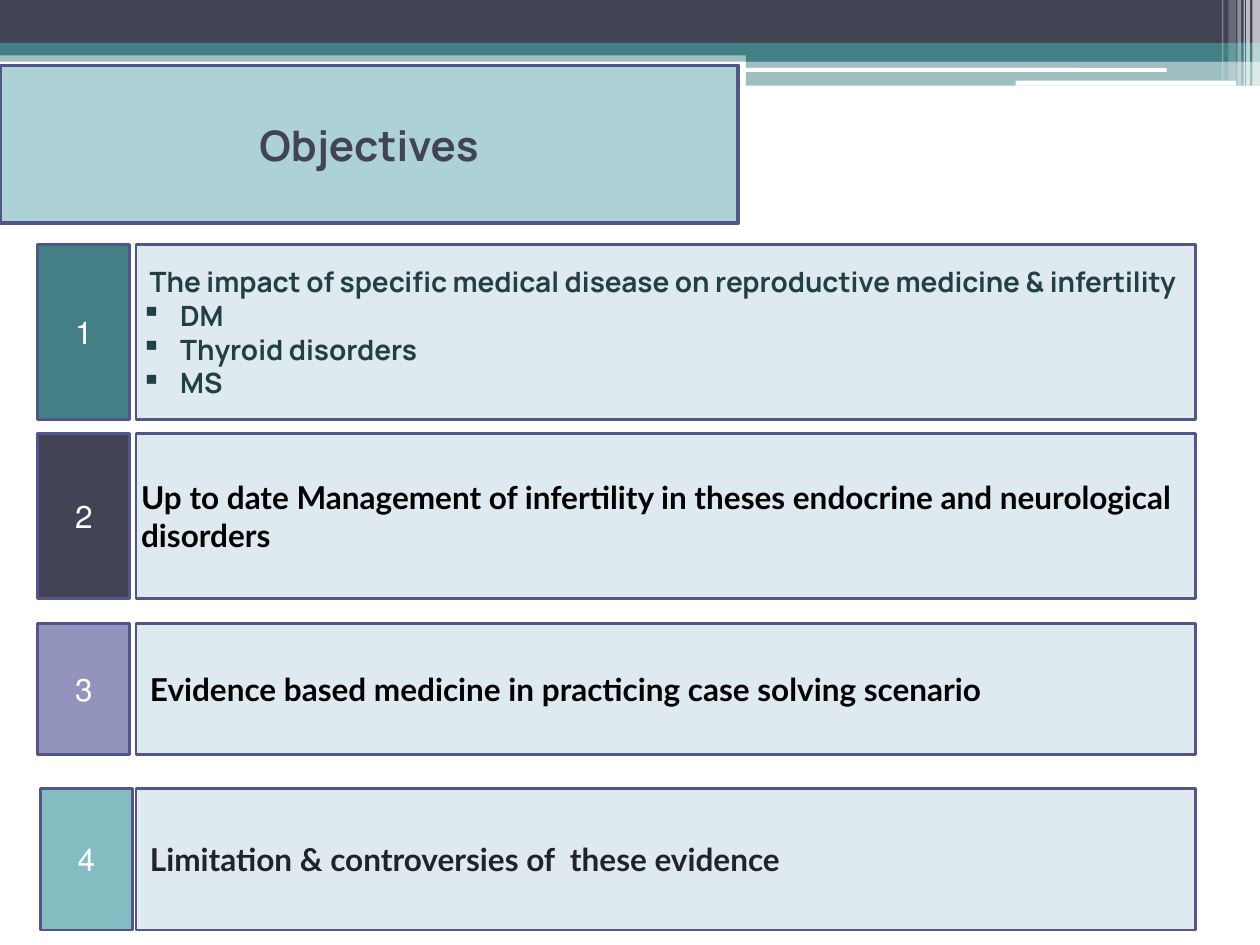
from lxml import etree
from pptx import Presentation
from pptx import util as u
from pptx.dml.color import RGBColor
from pptx.enum import shapes, text
from pptx.oxml.ns import qn

PX = 9144  # EMU per px, 100 px to the inch

WHITE = RGBColor(0xFF, 0xFF, 0xFF)
BLACK = RGBColor(0, 0, 0)
INK = RGBColor(0x21, 0x22, 0x2B)
SLATE = RGBColor(0x42, 0x44, 0x56)
TEAL = RGBColor(0x43, 0x80, 0x86)
DARK_TEAL = RGBColor(0x22, 0x40, 0x43)
LIGHT_TEAL = RGBColor(0x83, 0xBC, 0xC1)
TITLE_FILL = RGBColor(0xAD, 0xD2, 0xD6)
LILAC = RGBColor(0x93, 0x94, 0xBE)
PANEL = RGBColor(0xDE, 0xE9, 0xF0)
BORDER = RGBColor(0x53, 0x54, 0x8A)

# left, top, width, height, colour, opacity %
BANDS = [
    (0, 40, 1000, 9, TEAL, 50),
    (0, 0, 1000, 34, SLATE, 100),
    (0, 34, 1000, 10, TEAL, 100),
    (592, 39, 408, 10, TEAL, 100),
    (592, 48, 408, 20, TEAL, 50),
]
PILLS = [(591, 54, 335, 3), (806, 64, 175, 4)]
# left, width, height, opacity %
STRIPES = [
    (994, 6, 68, 65), (989, 3, 68, 65), (987, 1, 68, 60),
    (982, 3, 68, 40), (975, 6, 64, 20), (970, 1, 64, 30),
]

TITLE = "Objectives"
# top, height, number left, number fill, lines, font, size, colour, indent
ROWS = [
    (194, 139, 30, TEAL,
     ["The impact of specific medical disease on reproductive medicine & infertility ",
      "DM", "Thyroid disorders", "MS"], "Manrope", 16, DARK_TEAL, 0),
    (344, 131, 30, SLATE,
     ["Up to date Management of infertility in theses endocrine and neurological disorders"],
     "Lato", 18, BLACK, 0),
    (495, 104, 30, LILAC,
     ["Evidence based medicine in practicing case solving scenario"],
     "Lato", 18, BLACK, 7),
    (626, 112, 32, LIGHT_TEAL,
     ["Limitation & controversies of  these evidence"], "Lato", 18, INK, 7),
]
NUMBER_WIDTH, PANEL_LEFT, PANEL_WIDTH = 73, 108, 841
BULLET_INDENT = 31


def add_block(slide, box, fill, opacity=100, kind=shapes.MSO_SHAPE.RECTANGLE):
    shape = slide.shapes.add_shape(kind, *(value * PX for value in box))
    shape.shadow.inherit = False
    shape.fill.solid()
    shape.fill.fore_color.rgb = fill
    shape.line.fill.background()
    if opacity < 100:
        colour = shape.fill._xPr.find(qn("a:solidFill"))[0]
        etree.SubElement(colour, qn("a:alpha"), val=str(opacity * 1000))
    return shape


def add_text_box(slide, box, fill, border, lines, font, size, colour, bold,
                 align=text.PP_ALIGN.LEFT):
    """Add a bordered block with middle-anchored text and return its paragraphs."""
    shape = add_block(slide, box, fill)
    shape.line.color.rgb = BORDER
    shape.line.width = u.Pt(border)
    frame = shape.text_frame
    frame.word_wrap = True
    frame.vertical_anchor = text.MSO_ANCHOR.MIDDLE
    frame.margin_left = frame.margin_right = 4 * PX
    frame.margin_top = frame.margin_bottom = 2 * PX
    frame.text = "\n".join(lines)
    for paragraph in frame.paragraphs:
        paragraph.alignment = align
        paragraph.font.name = font
        paragraph.font.size = u.Pt(size)
        paragraph.font.bold = bold
        paragraph.font.color.rgb = colour
    return frame.paragraphs


def set_indent(paragraph, left, first=0):
    properties = paragraph._p.get_or_add_pPr()
    properties.set("marL", str(left * PX))
    properties.set("indent", str(first * PX))
    return properties


def add_bullet(paragraph):
    properties = set_indent(paragraph, BULLET_INDENT, -BULLET_INDENT)
    bullet = etree.Element(qn("a:buChar"), char="▪")
    properties.insert(0, bullet)


def add_header(slide):
    for *box, colour, opacity in BANDS:
        add_block(slide, box, colour, opacity)
    for box in PILLS:
        add_block(slide, box, WHITE, kind=shapes.MSO_SHAPE.ROUNDED_RECTANGLE)
    for left, width, height, opacity in STRIPES:
        add_block(slide, (left, 0, width, height), WHITE, opacity)
    add_text_box(slide, (0, 52, 586, 125), TITLE_FILL, 2.25, [TITLE],
                 "Manrope", 24, SLATE, True, text.PP_ALIGN.CENTER)


def add_row(slide, number, row):
    top, height, left, fill, lines, font, size, colour, indent = row
    label, = add_text_box(slide, (left, top, NUMBER_WIDTH, height), fill, 1.5,
                          [str(number)], "Lato", 18, WHITE, False,
                          text.PP_ALIGN.CENTER)
    label._p.get_or_add_pPr().set("rtl", "1")
    heading, *items = add_text_box(
        slide, (PANEL_LEFT, top, PANEL_WIDTH, height), PANEL, 1.5,
        lines, font, size, colour, True)
    set_indent(heading, indent)
    if items:
        heading.alignment = text.PP_ALIGN.CENTER
    for item in items:
        add_bullet(item)


def main():
    presentation = Presentation()
    presentation.slide_width = 1000 * PX
    presentation.slide_height = 750 * PX
    slide = presentation.slides.add_slide(presentation.slide_layouts[6])
    add_header(slide)
    for number, row in enumerate(ROWS, 1):
        add_row(slide, number, row)
    presentation.save("out.pptx")


if __name__ == "__main__":
    main()
